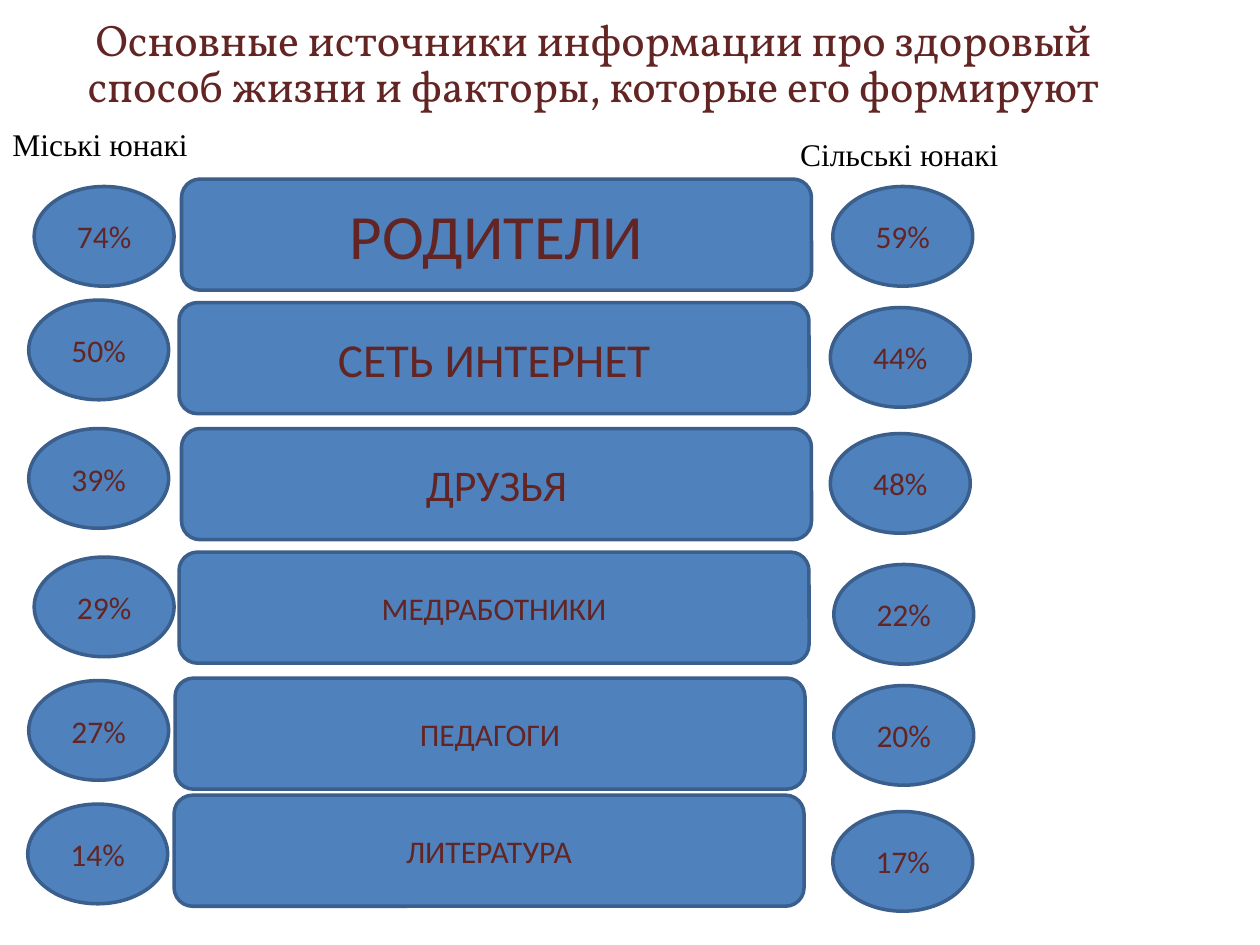
from pptx import Presentation
from pptx.dml.color import RGBColor
from pptx.enum.shapes import MSO_SHAPE as Shape
from pptx.enum.text import MSO_ANCHOR as Anchor, PP_ALIGN as Align
from pptx.util import Cm, Pt

BLUE = RGBColor(0x4F, 0x81, 0xBD)
DARK_BLUE = RGBColor(0x3A, 0x5F, 0x8C)
MAROON = RGBColor(0x63, 0x25, 0x23)
BLACK = RGBColor(0, 0, 0)

TITLE = ("Основные источники информации про здоровый способ жизни "
         "и факторы, которые его формируют")
BAR_SIZE = (12.7, 2.24)
OVAL_SIZE = (2.82, 2.01)

# source, text size, bar (left, top), then share and (left, top) for urban and rural
ROWS = [
    ("РОДИТЕЛИ", 36, (3.66, 3.61), "74%", (0.69, 3.76), "59%", (16.79, 3.76)),
    ("СЕТЬ ИНТЕРНЕТ", 27, (3.61, 6.1), "50%", (0.58, 6.05), "44%", (16.74, 6.2)),
    ("ДРУЗЬЯ", 25, (3.66, 8.64), "39%", (0.58, 8.64), "48%", (16.74, 8.74)),
    ("МЕДРАБОТНИКИ", 18, (3.61, 11.13), "29%", (0.69, 11.23), "22%", (16.81, 11.38)),
    ("ПЕДАГОГИ", 18, (3.53, 13.67), "27%", (0.58, 13.72), "20%", (16.81, 13.82)),
    ("ЛИТЕРАТУРА", 18, (3.51, 16.03), "14%", (0.56, 16.21), "17%", (16.79, 16.36)),
]


def set_text(sp, text, font, size, color, **paragraph_format):
    tf = sp.text_frame
    tf.word_wrap = True
    p = tf.paragraphs[0]
    for name, value in paragraph_format.items():
        setattr(p, name, value)
    r = p.add_run()
    r.text = text
    for name, value in {"name": font, "size": Pt(size), "bold": False}.items():
        setattr(r.font, name, value)
    r.font.color.rgb = color


def format_title(sp):
    box = {"left": Cm(0.94), "top": Cm(0), "width": Cm(22.05), "height": Cm(2.64)}
    for name, value in box.items():
        setattr(sp, name, value)
    sp.text_frame.vertical_anchor = Anchor.MIDDLE
    set_text(sp, TITLE, "Vollkorn", 25.2, MAROON,
             alignment=Align.CENTER, line_spacing=0.87)


def add_label(s, text, left, top, width):
    sp = s.shapes.add_textbox(Cm(left), Cm(top), Cm(width), Cm(1.02))
    set_text(sp, text, "Times New Roman", 18, BLACK)


def add_block(s, kind, position, size, text, font_size=18):
    sp = s.shapes.add_shape(kind, *map(Cm, position + size))
    sp.shadow.inherit = False
    sp.fill.solid()
    sp.fill.fore_color.rgb = BLUE
    sp.line.color.rgb = DARK_BLUE
    sp.line.width = Pt(2)
    sp.text_frame.vertical_anchor = Anchor.MIDDLE
    set_text(sp, text, "Calibri", font_size, MAROON, alignment=Align.CENTER)


def main():
    prs = Presentation()
    prs.slide_width, prs.slide_height = Cm(25.4), Cm(19.05)
    s = prs.slides.add_slide(prs.slide_layouts[5])
    format_title(s.shapes.title)
    for source, size, bar, urban, urban_at, rural, rural_at in ROWS:
        add_block(s, Shape.ROUNDED_RECTANGLE, bar, BAR_SIZE, source, size)
        add_block(s, Shape.OVAL, urban_at, OVAL_SIZE, urban)
        add_block(s, Shape.OVAL, rural_at, OVAL_SIZE, rural)
    add_label(s, "Міські юнакі", 0, 2.39, 4.5)
    add_label(s, "Сільські юнакі", 15.88, 2.59, 5.28)
    prs.save("out.pptx")


if __name__ == "__main__":
    main()
